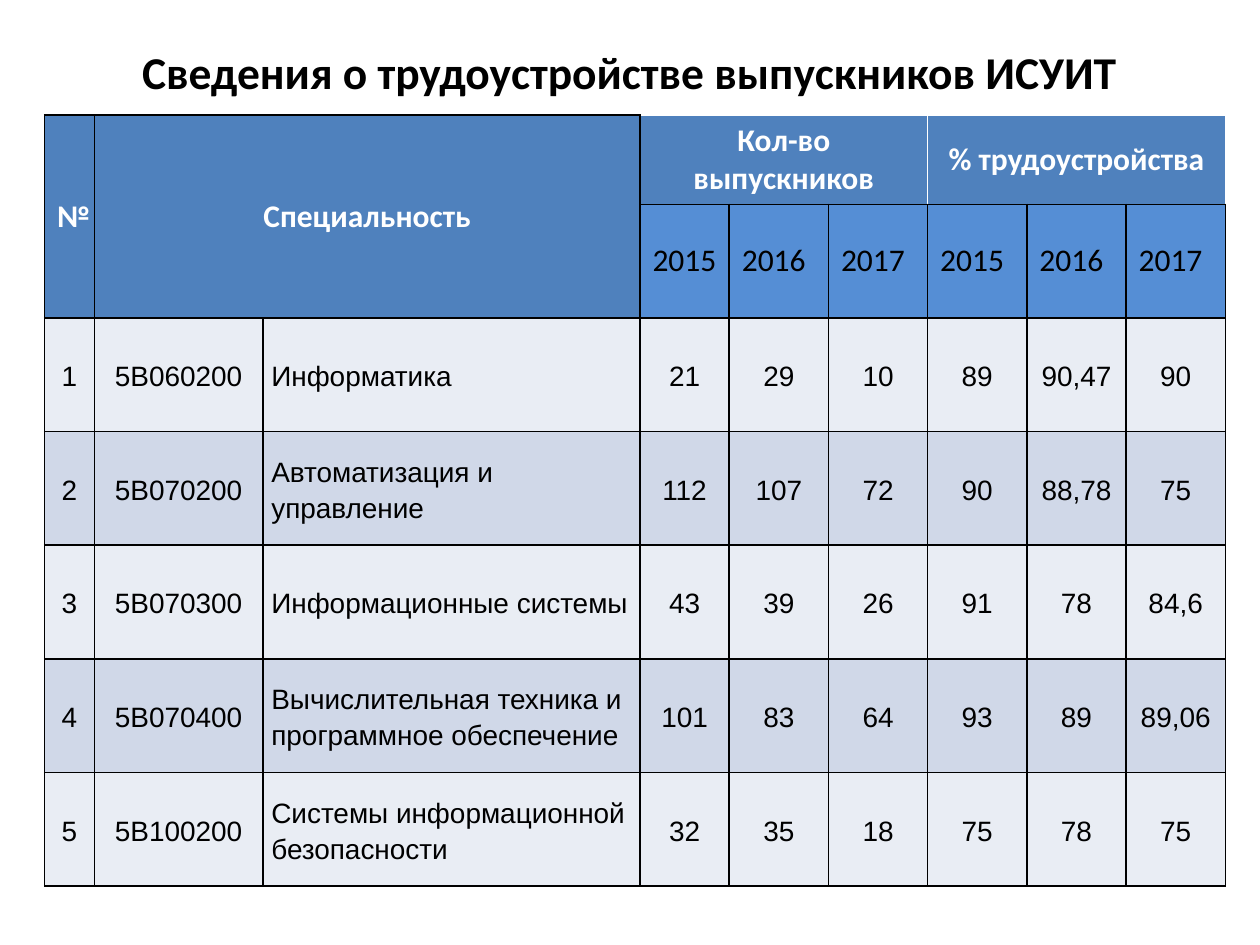
from lxml.etree import SubElement
from pptx import Presentation
from pptx.dml.color import RGBColor
from pptx.enum.text import MSO_ANCHOR, PP_ALIGN
from pptx.oxml.ns import qn
from pptx.util import Cm, Pt

COLORS = {
    "black": "000000",
    "white": "FFFFFF",
    "header": "4F81BD",
    "year": "558ED5",
    "odd_row": "E9EDF4",
    "even_row": "D0D8E8",
}
COLUMN_WIDTHS = [1, 3.4, 7.6, 1.8] + [2] * 5
ROW_HEIGHTS = [1.8] + [2.29] * 6
FIRST_YEAR_COLUMN = 3
YEARS = ["2015", "2016", "2017"]

# Text, top-left cell and bottom-right cell of each merged heading
HEADINGS = [
    ("№", (0, 0), (1, 0), PP_ALIGN.LEFT),
    ("Специальность", (0, 1), (1, 2), PP_ALIGN.CENTER),
    ("Кол-во выпускников", (0, 3), (0, 5), PP_ALIGN.CENTER),
    ("% трудоустройства", (0, 6), (0, 8), PP_ALIGN.CENTER),
]
SPECIALTIES = [
    ("5B060200", "Информатика", "21", "29", "10", "89", "90,47", "90"),
    ("5B070200", "Автоматизация и управление", "112", "107", "72", "90", "88,78", "75"),
    ("5B070300", "Информационные системы", "43", "39", "26", "91", "78", "84,6"),
    ("5B070400", "Вычислительная техника и программное обеспечение",
     "101", "83", "64", "93", "89", "89,06"),
    ("5B100200", "Системы информационной безопасности", "32", "35", "18", "75", "78", "75"),
]


def write_text(text_frame, text, size=18, font="Calibri", color="black", bold=False,
               align=PP_ALIGN.LEFT, line_spacing=None):
    text_frame.word_wrap = True
    paragraph = text_frame.paragraphs[0]
    paragraph.alignment = align
    paragraph.line_spacing = line_spacing
    run = paragraph.add_run()
    run.text = text
    run.font.size = Pt(size)
    run.font.name = font
    run.font.bold = bold
    run.font.color.rgb = RGBColor.from_string(COLORS[color])


def style_cell(cell, fill, **border_colors):
    """Draw the four borders, black unless named otherwise, then fill the cell."""
    properties = cell._tc.get_or_add_tcPr()
    for side in ("L", "R", "T", "B"):
        line = SubElement(properties, qn(f"a:ln{side}"), w=str(Pt(1)))
        solid_fill = SubElement(line, qn("a:solidFill"))
        color = COLORS[border_colors.get(side, "black")]
        SubElement(solid_fill, qn("a:srgbClr"), val=color)
    cell.fill.solid()
    cell.fill.fore_color.rgb = RGBColor.from_string(COLORS[fill])
    cell.vertical_anchor = MSO_ANCHOR.MIDDLE


def add_title(slide, left, top, width, height):
    text_frame = slide.shapes.add_textbox(Cm(left), Cm(top), Cm(width), Cm(height)).text_frame
    text_frame.vertical_anchor = MSO_ANCHOR.MIDDLE
    write_text(text_frame, "Сведения о трудоустройстве выпускников ИСУИТ",
               size=26, bold=True, align=PP_ALIGN.CENTER)


def fill_header(table):
    # Backgrounds: white rules around the two groups of years
    for column in range(len(COLUMN_WIDTHS)):
        in_group = column >= FIRST_YEAR_COLUMN
        borders = {"T": "white", "L": "white", "R": "white"} if in_group else {}
        if column == FIRST_YEAR_COLUMN:
            borders["L"] = "black"
        style_cell(table.cell(0, column), "header", **borders)
        style_cell(table.cell(1, column), "year" if in_group else "header")

    # Merged headings
    for text, first, last, align in HEADINGS:
        cell = table.cell(*first)
        cell.merge(table.cell(*last))
        write_text(cell.text_frame, text, color="white", bold=True, align=align)

    # Years under both groups
    for column, year in enumerate(YEARS * 2, start=FIRST_YEAR_COLUMN):
        write_text(table.cell(1, column).text_frame, year)


def fill_specialties(table):
    for number, specialty in enumerate(SPECIALTIES, start=1):
        for column, text in enumerate((str(number), *specialty)):
            cell = table.cell(number + 1, column)
            style_cell(cell, "odd_row" if number % 2 else "even_row")
            cell.margin_left = cell.margin_right = Cm(0.17)
            cell.margin_top = cell.margin_bottom = 0
            write_text(cell.text_frame, text, size=16, font="Arial", line_spacing=1.15,
                       align=PP_ALIGN.LEFT if column == 2 else PP_ALIGN.CENTER)


def add_employment_table(slide, left, top):
    table = slide.shapes.add_table(
        len(ROW_HEIGHTS), len(COLUMN_WIDTHS), Cm(left), Cm(top),
        Cm(sum(COLUMN_WIDTHS)), Cm(sum(ROW_HEIGHTS))).table
    for column, width in zip(table.columns, COLUMN_WIDTHS):
        column.width = Cm(width)
    for row, height in zip(table.rows, ROW_HEIGHTS):
        row.height = Cm(height)
    fill_header(table)
    fill_specialties(table)


def main():
    presentation = Presentation()
    presentation.slide_width = Cm(25.4)
    presentation.slide_height = Cm(19.05)
    slide = presentation.slides.add_slide(presentation.slide_layouts[6])
    add_title(slide, 1.27, 0.76, 22.86, 1.37)
    add_employment_table(slide, 0.9, 2.32)
    presentation.save("out.pptx")


if __name__ == "__main__":
    main()
